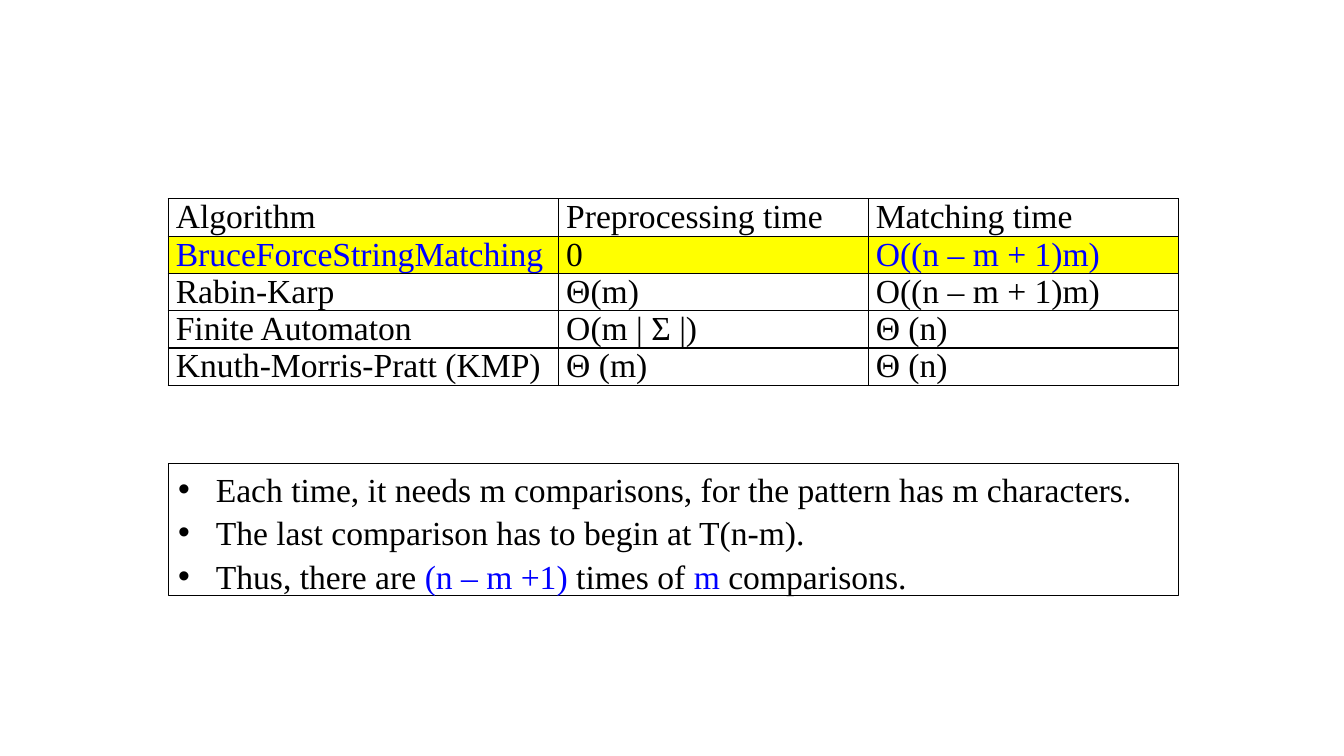
import pptx
import pptx.dml.color
import pptx.enum.shapes
import pptx.enum.text
import pptx.oxml
import pptx.oxml.ns
import pptx.util
from pptx.util import Cm

BLACK = pptx.dml.color.RGBColor(0x00, 0x00, 0x00)
BLUE = pptx.dml.color.RGBColor(0x00, 0x00, 0xFF)
WHITE = pptx.dml.color.RGBColor(0xFF, 0xFF, 0xFF)
YELLOW = pptx.dml.color.RGBColor(0xFF, 0xFF, 0x00)

LEFT = Cm(4.24)
COLUMN_WIDTHS = [Cm(9.84), Cm(7.8), Cm(7.82)]
ROW_HEIGHT = Cm(0.94)

ALGORITHMS = [
    ("Algorithm", "Preprocessing time", "Matching time"),
    ("BruceForceStringMatching", "0", "O((n – m + 1)m)"),
    ("Rabin-Karp", "Θ(m)", "O((n – m + 1)m)"),
    ("Finite Automaton", "O(m | Σ |)", "Θ (n)"),
    ("Knuth-Morris-Pratt (KMP)", "Θ (m)", "Θ (n)"),
]
HIGHLIGHTED_ROW = 1
BLUE_COLUMNS = (0, 2)

REMARKS = [
    [("Each time, it needs m comparisons, for the pattern has m characters.", BLACK)],
    [("The last comparison has to begin at T(n-m).", BLACK)],
    [("Thus, there are ", BLACK), ("(n – m +1) ", BLUE), ("times of ", BLACK),
     ("m", BLUE), (" comparisons.", BLACK)],
]


def add_text(paragraph, text, *, font="Times New Roman", size=24, color=BLACK):
    run = paragraph.add_run()
    run.text = text
    run.font.name = font
    run.font.size = pptx.util.Pt(size)
    run.font.color.rgb = color


def set_bullet(paragraph, indent):
    """Give the paragraph a round bullet with a hanging indent."""
    properties = paragraph._p.get_or_add_pPr()
    properties.set("marL", str(indent))
    properties.set("indent", str(-indent))
    namespace = pptx.oxml.ns.nsdecls("a")
    properties.append(pptx.oxml.parse_xml(f'<a:buFont {namespace} typeface="Arial"/>'))
    properties.append(pptx.oxml.parse_xml(f'<a:buChar {namespace} char="•"/>'))


def set_borders(cell, color, width):
    """Draw all four sides of the cell, before its fill in the XML order."""
    properties = cell._tc.get_or_add_tcPr()
    for position, side in enumerate(("lnL", "lnR", "lnT", "lnB")):
        properties.insert(position, pptx.oxml.parse_xml(
            f'<a:{side} {pptx.oxml.ns.nsdecls("a")} w="{width}"><a:solidFill>'
            f'<a:srgbClr val="{color}"/></a:solidFill></a:{side}>'))


class SlideBuilder:
    def __init__(self, slide, line_color=BLACK, line_width=pptx.util.Pt(1)):
        self.slide = slide
        self.line_color = line_color
        self.line_width = line_width

    def table(self, rows, left, top, column_widths, row_height):
        table = self.slide.shapes.add_table(
            len(rows), len(column_widths), left, top,
            sum(column_widths), row_height * len(rows)).table
        table.first_row = table.horz_banding = False
        for column, width in zip(table.columns, column_widths):
            column.width = width
        for row_index, row in enumerate(rows):
            table.rows[row_index].height = row_height
            highlighted = row_index == HIGHLIGHTED_ROW
            for column_index, text in enumerate(row):
                cell = table.cell(row_index, column_index)
                cell.margin_left = cell.margin_right = Cm(0.19)
                cell.margin_top = cell.margin_bottom = 0
                cell.fill.solid()
                cell.fill.fore_color.rgb = YELLOW if highlighted else WHITE
                set_borders(cell, self.line_color, self.line_width)
                is_blue = highlighted and column_index in BLUE_COLUMNS
                add_text(cell.text_frame.paragraphs[0], text,
                         color=BLUE if is_blue else BLACK)

    def bullet_box(self, items, left, top, width, height):
        shape = self.slide.shapes.add_shape(
            pptx.enum.shapes.MSO_SHAPE.RECTANGLE, left, top, width, height)
        shape.shadow.inherit = False
        shape.fill.solid()
        shape.fill.fore_color.rgb = WHITE
        shape.line.color.rgb = self.line_color
        shape.line.width = self.line_width
        frame = shape.text_frame
        frame.word_wrap = True
        frame.vertical_anchor = pptx.enum.text.MSO_ANCHOR.TOP
        for index, item in enumerate(items):
            paragraph = frame.add_paragraph() if index else frame.paragraphs[0]
            paragraph.alignment = pptx.enum.text.PP_ALIGN.LEFT
            paragraph.space_before = pptx.util.Pt(2.4)
            set_bullet(paragraph, Cm(0.95))
            for text, color in item:
                add_text(paragraph, text, color=color)


def main():
    presentation = pptx.Presentation()
    presentation.slide_width = Cm(33.87)
    presentation.slide_height = Cm(19.05)
    builder = SlideBuilder(presentation.slides.add_slide(presentation.slide_layouts[6]))
    builder.table(ALGORITHMS, LEFT, Cm(5.01), COLUMN_WIDTHS, ROW_HEIGHT)
    builder.bullet_box(REMARKS, LEFT, Cm(11.68), sum(COLUMN_WIDTHS), Cm(3.33))
    presentation.save("out.pptx")


if __name__ == "__main__":
    main()
